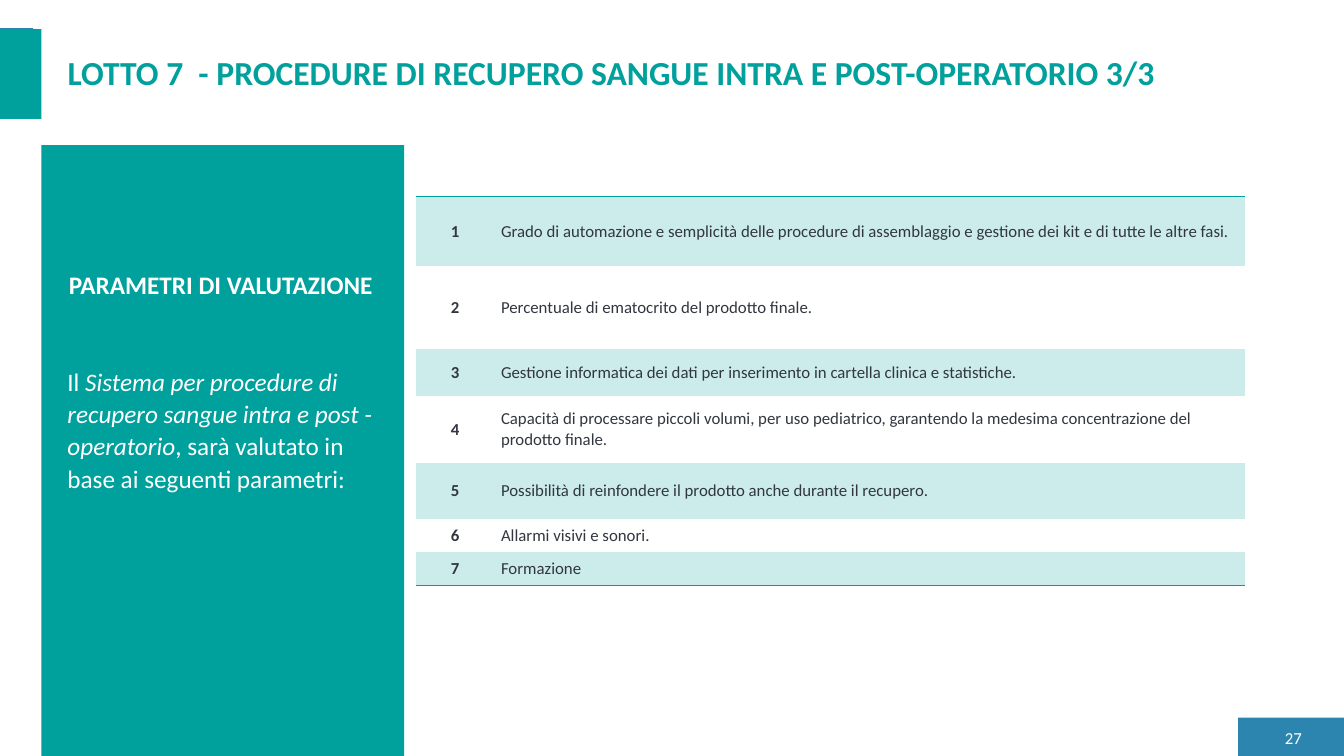
from pptx import Presentation
from pptx.dml.color import RGBColor
from pptx.enum.shapes import MSO_SHAPE
from pptx.enum.text import MSO_ANCHOR, MSO_AUTO_SIZE, PP_ALIGN
from pptx.oxml import parse_xml
from pptx.oxml.ns import nsdecls
from pptx.util import Inches, Pt

TITLE = "LOTTO 7  - PROCEDURE DI RECUPERO SANGUE INTRA E POST-OPERATORIO 3/3"
HEADING = "PARAMETRI DI VALUTAZIONE"
INTRO = [
    ("Il ", False),
    ("Sistema per procedure di recupero sangue intra e post - operatorio", True),
    (", sarà valutato in base ai seguenti parametri:", False),
]
PAGE_NUMBER = "27"
CRITERIA = [
    ("Grado di automazione e semplicità delle procedure di assemblaggio e gestione dei kit e di tutte le altre fasi.", 0.69),
    ("Percentuale di ematocrito del prodotto finale.", 0.82),
    ("Gestione informatica dei dati per inserimento in cartella clinica e statistiche.", 0.47),
    ("Capacità di processare piccoli volumi, per uso pediatrico, garantendo la medesima concentrazione del prodotto finale.", 0.66),
    ("Possibilità di reinfondere il prodotto anche durante il recupero.", 0.56),
    ("Allarmi visivi e sonori.", 0.33),
    ("Formazione", 0.33),
]
COLUMN_WIDTHS = (0.77, 7.45)

THEME = {
    "font": "Calibri",
    "teal": RGBColor.from_string("00A09D"),
    "blue": RGBColor.from_string("2C85AE"),
    "band": RGBColor.from_string("CCECEB"),
    "ink": RGBColor.from_string("32363F"),
    "white": RGBColor.from_string("FFFFFF"),
    "title": Pt(24),
    "body": Pt(18),
    "small": Pt(12),
}
NO_STYLE = "{2D5ABB26-0587-4C30-8999-92F81FD0307C}"

BLOCKS = [
    ((12.28, 7.12, 1.05, 0.38), "blue"),
    ((0, 0.28, 0.33, 0.83), "blue"),
    ((0.41, 1.44, 3.6, 6.06), "teal"),
    ((0, 0.29, 0.41, 0.89), "teal"),
]


def apply(target, values):
    for name, value in values.items():
        setattr(target, name, value)


def write(frame, pieces, size, color, bold=False, **paragraph_format):
    paragraph = frame.paragraphs[0]
    apply(paragraph, paragraph_format)
    for text, italic in pieces:
        run = paragraph.add_run()
        run.text = text
        apply(run.font, {"name": THEME["font"], "size": THEME[size],
                         "bold": bold, "italic": italic})
        run.font.color.rgb = THEME[color]


def add_block(slide, box, color):
    block = slide.shapes.add_shape(MSO_SHAPE.RECTANGLE, *map(Inches, box))
    block.shadow.inherit = False
    block.fill.solid()
    block.fill.fore_color.rgb = THEME[color]
    block.line.fill.background()


def add_text(slide, box, pieces, size, wrap=True, anchor=MSO_ANCHOR.TOP, **text_format):
    frame = slide.shapes.add_textbox(*map(Inches, box)).text_frame
    apply(frame, {"word_wrap": wrap, "vertical_anchor": anchor})
    write(frame, pieces, size, "white", **text_format)


def add_rule(cell, side):
    rule = parse_xml(
        f'<a:{side} {nsdecls("a")} w="{Pt(1)}"><a:solidFill>'
        f'<a:srgbClr val="{THEME["teal"]}"/></a:solidFill></a:{side}>')
    cell._tc.get_or_add_tcPr().insert(0, rule)


def add_criteria(slide):
    height = sum(row_height for _, row_height in CRITERIA)
    frame = slide.shapes.add_table(
        len(CRITERIA), len(COLUMN_WIDTHS), Inches(4.13), Inches(1.95),
        Inches(sum(COLUMN_WIDTHS)), Inches(height))
    table = frame.table
    apply(table, {"first_row": False, "horz_banding": False})
    table._tbl.tblPr[0].text = NO_STYLE
    for column, width in zip(table.columns, COLUMN_WIDTHS):
        column.width = Inches(width)
    last = len(CRITERIA) - 1
    for index, (criterion, row_height) in enumerate(CRITERIA):
        table.rows[index].height = Inches(row_height)
        number_cell, criterion_cell = table.rows[index].cells
        for cell, margin in ((number_cell, 0.05), (criterion_cell, 0.07)):
            apply(cell, {"vertical_anchor": MSO_ANCHOR.MIDDLE,
                         "margin_left": Inches(margin), "margin_right": Inches(margin),
                         "margin_top": 0, "margin_bottom": 0})
            if index % 2 == 0:
                cell.fill.solid()
                cell.fill.fore_color.rgb = THEME["band"]
            else:
                cell.fill.background()
            if index in (0, last):
                add_rule(cell, "lnT" if index == 0 else "lnB")
        write(number_cell.text_frame, [(str(index + 1), False)], "small", "ink", bold=True,
              alignment=PP_ALIGN.CENTER, space_before=Pt(12), space_after=Pt(10))
        write(criterion_cell.text_frame, [(criterion, False)], "small", "ink",
              alignment=PP_ALIGN.JUSTIFY if index == 0 else PP_ALIGN.LEFT,
              space_after=Pt(10))


def main():
    deck = Presentation()
    apply(deck, {"slide_width": Inches(13.33), "slide_height": Inches(7.5)})
    slide = deck.slides.add_slide(deck.slide_layouts[5])

    title = slide.shapes.title
    apply(title, dict(zip(("left", "top", "width", "height"),
                          map(Inches, (0.57, 0.46, 12.31, 0.5)))))
    apply(title.text_frame, {"word_wrap": True, "vertical_anchor": MSO_ANCHOR.TOP,
                             "auto_size": MSO_AUTO_SIZE.NONE})
    write(title.text_frame, [(TITLE, False)], "title", "teal", bold=True,
          alignment=PP_ALIGN.LEFT)

    for box, color in BLOCKS:
        add_block(slide, box, color)
    add_text(slide, (12.6, 7.2, 0.41, 0.23), [(PAGE_NUMBER, False)], "small",
             anchor=MSO_ANCHOR.MIDDLE, alignment=PP_ALIGN.RIGHT)
    add_text(slide, (0.57, 3.56, 3.28, 2.57), INTRO, "body",
             line_spacing=1.07, space_after=Pt(8))
    add_text(slide, (0.57, 2.62, 3.24, 1.02), [(HEADING, False)], "body", wrap=False,
             bold=True, alignment=PP_ALIGN.CENTER, space_before=Pt(12), space_after=Pt(10))
    add_criteria(slide)
    deck.save("out.pptx")


if __name__ == "__main__":
    main()
